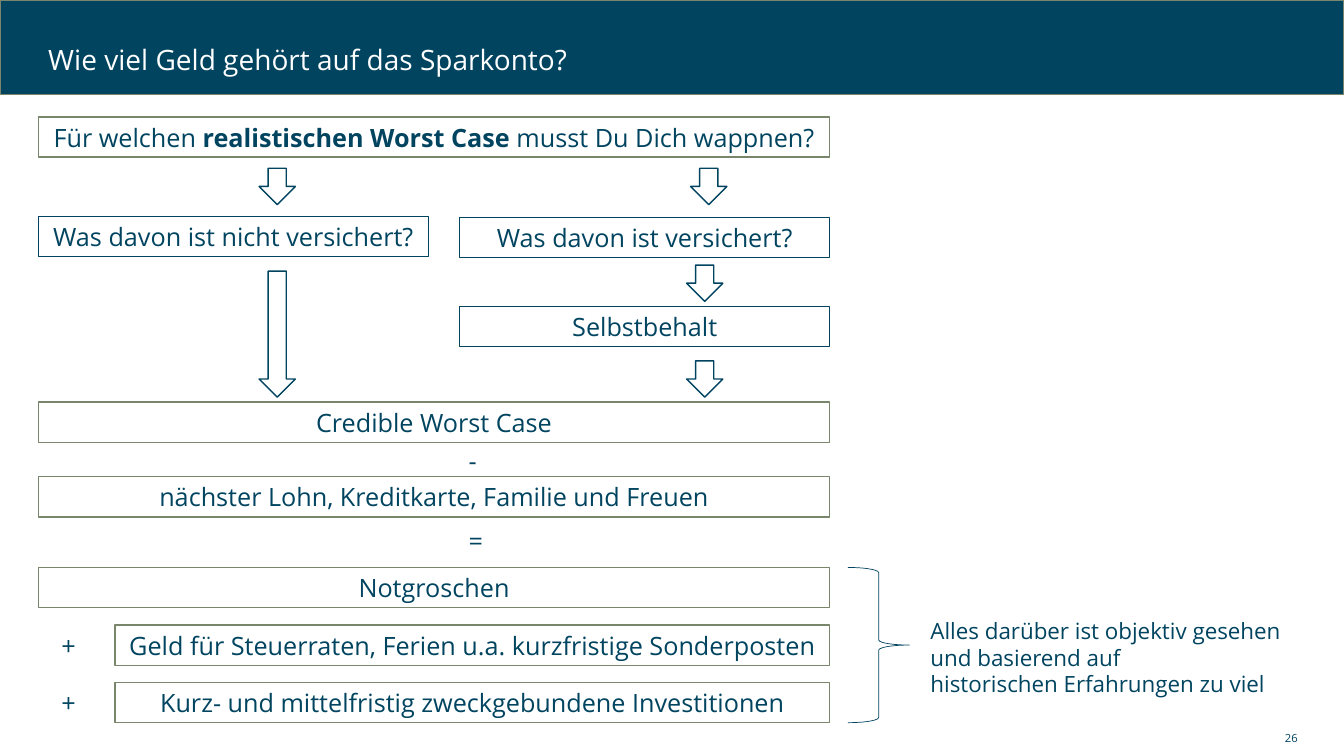
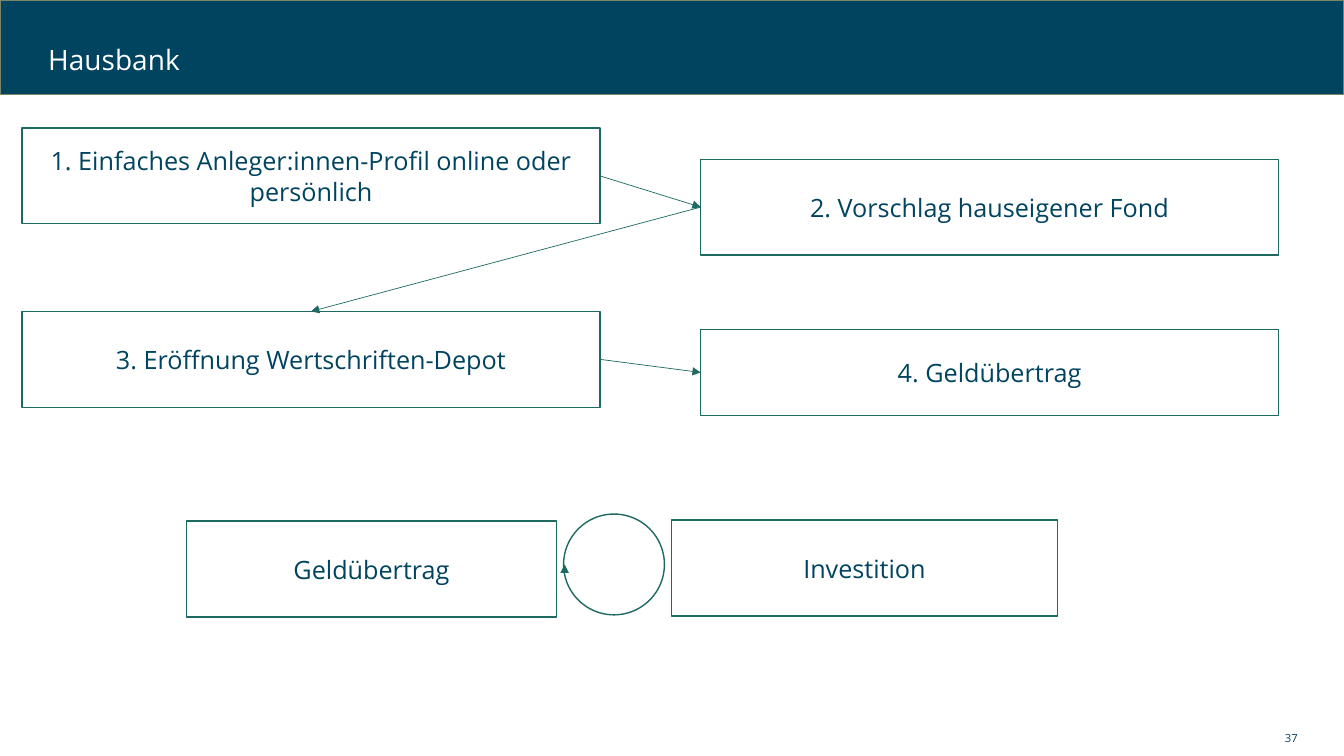
import pptx
import pptx.util
import pptx.dml.color
import pptx.enum.shapes
import pptx.enum.text
import pptx.oxml
import pptx.oxml.ns

Inches = pptx.util.Inches
Pt = pptx.util.Pt
KIND = pptx.enum.shapes.MSO_SHAPE
SIDE = pptx.enum.text.PP_ALIGN
HOLD = pptx.enum.text.MSO_ANCHOR
FONT = "Open Sans"
COLORS = {"navy": "004460", "olive": "7A866C", "green": "1E6A62", "white": "FFFFFF"}
TOP, LEFT, RIGHT = 0, 1, 3


def tint(name):
    return pptx.dml.color.RGBColor.from_string(COLORS[name])


def write(shape, text, size=18, color="navy", align=SIDE.CENTER,
          anchor=HOLD.MIDDLE, wrap=True, space=1.0):
    frame = shape.text_frame
    frame.word_wrap = wrap
    frame.vertical_anchor = anchor
    for i, line in enumerate(text.split("\n")):
        para = frame.paragraphs[0] if i == 0 else frame.add_paragraph()
        para.alignment = align
        para.line_spacing = space
        for j, part in enumerate(line.split("*")):
            run = para.add_run()
            run.text = part
            run.font.name = FONT
            run.font.size = Pt(size)
            run.font.bold = j % 2 == 1
            run.font.color.rgb = tint(color)


def label(slide, text, x, y, w, h, **form):
    box = slide.shapes.add_textbox(Inches(x), Inches(y), Inches(w), Inches(h))
    write(box, text, **form)


def draw(slide, kind, x, y, w, h, line="navy", width=1.0, fill=None):
    shape = slide.shapes.add_shape(kind, Inches(x), Inches(y), Inches(w), Inches(h))
    shape.shadow.inherit = False
    shape.line.color.rgb = tint(line)
    shape.line.width = Pt(width)
    if fill:
        shape.fill.solid()
        shape.fill.fore_color.rgb = tint(fill)
    else:
        shape.fill.background()
    return shape


def panel(slide, text, x, y, w, h=0.4, **look):
    shape = draw(slide, KIND.RECTANGLE, x, y, w, h, **look)
    write(shape, text)
    return shape


def arrow(slide, start, end):
    line = slide.shapes.add_connector(
        pptx.enum.shapes.MSO_CONNECTOR.STRAIGHT,
        *[Inches(v) for v in start + end])
    line.line.color.rgb = tint("green")
    line.line.width = Pt(0.5)
    edge = line.line._get_or_add_ln()
    head = pptx.oxml.parse_xml(
        '<a:tailEnd %s type="triangle"/>' % pptx.oxml.ns.nsdecls("a"))
    edge.append(head)
    line._element.spPr.append(
        pptx.oxml.parse_xml("<a:effectLst %s/>" % pptx.oxml.ns.nsdecls("a")))
    return line


def join(slide, first, side, last, goal):
    line = arrow(slide, (0, 0), (1, 1))
    line.begin_connect(first, side)
    line.end_connect(last, goal)


def page(deck, title, number):
    slide = deck.slides.add_slide(deck.slide_layouts[6])
    draw(slide, KIND.RECTANGLE, 0, 0, 13.33, 0.94, line="olive", fill="navy")
    label(slide, title, 0.38, 0.34, 11.02, 0.54, size=20, color="white",
          align=SIDE.LEFT, space=0.9)
    label(slide, str(number), 9.42, 7.2, 3.55, 0.24, size=8, align=SIDE.RIGHT)
    return slide


def flow(slide, x, y, w):
    for text, top in (
        ("Für welchen *realistischen Worst Case* musst Du Dich wappnen?", 0),
        ("Credible Worst Case", 2.83),
        ("nächster Lohn, Kreditkarte, Familie und Freuen", 3.57),
    ):
        panel(slide, text, x, y + top, w, line="olive")
    half = 3.67
    panel(slide, "Was davon ist nicht versichert?", x, y + 0.99, 3.87, width=0.75)
    for text, top in (("Was davon ist versichert?", 1), ("Selbstbehalt", 1.88)):
        panel(slide, text, x + w - half, y + top, half, width=0.75)
    for left, top, high in ((2.19, 0.51, 0.36), (6.47, 0.51, 0.36),
                            (6.43, 1.47, 0.36), (6.43, 2.42, 0.36),
                            (2.19, 1.53, 1.25)):
        draw(slide, KIND.DOWN_ARROW, x + left, y + top, 0.36, high)
    for sign, top in (("-", 3.21), ("=", 4)):
        label(slide, sign, x + 4.17, y + top, 0.35, 0.4, align=SIDE.LEFT, wrap=False)


def total(slide, x, y, w):
    step, dent = 0.57, 0.76
    panel(slide, "Notgroschen", x, y, w, line="olive")
    for i, text in enumerate((
        "Geld für Steuerraten, Ferien u.a. kurzfristige Sonderposten",
        "Kurz- und mittelfristig zweckgebundene Investitionen",
    ), 1):
        panel(slide, text, x + dent, y + i * step, w - dent, line="olive")
        label(slide, "+", x + 0.13, y + i * step, 0.35, 0.4,
              align=SIDE.LEFT, wrap=False)
    draw(slide, KIND.RIGHT_BRACE, x + w + 0.18, y, 0.61, 2 * step + 0.4, width=0.5)
    label(slide, "Alles darüber ist objektiv gesehen\nund basierend auf\n"
          "historischen Erfahrungen zu viel", x + w + 0.9, y + 0.44, 3.71, 0.91,
          size=16, align=SIDE.LEFT, anchor=HOLD.TOP, wrap=False)


def steps(slide, x, y, w, h):
    look = {"line": "green", "fill": "white"}
    next_x = x + w + 1
    one = panel(slide, "1. Einfaches Anleger:innen-Profil online oder persönlich",
                x, y, w, h, **look)
    two = panel(slide, "2. Vorschlag hauseigener Fond", next_x, y + 0.31, w, h, **look)
    three = panel(slide, "3. Eröffnung Wertschriften-Depot", x, y + 1.82, w, h, **look)
    four = panel(slide, "4. Geldübertrag", next_x, y + 2, w, h - 0.1, **look)
    join(slide, one, RIGHT, two, LEFT)
    join(slide, two, LEFT, three, TOP)
    join(slide, three, RIGHT, four, LEFT)


def cycle(slide, x, y, h):
    look = {"line": "green", "fill": "white"}
    panel(slide, "Geldübertrag", x, y + 0.01, 3.67, h, **look)
    panel(slide, "Investition", x + 4.81, y, 3.83, h, **look)
    draw(slide, KIND.OVAL, x + 3.74, y - 0.06, 1, 1, **look)
    arrow(slide, (x + 3.75, y + 0.52), (x + 3.75, y + 0.44))


def main():
    deck = pptx.Presentation()
    deck.slide_width = Inches(13.33)
    deck.slide_height = Inches(7.5)
    slide = page(deck, "Wie viel Geld gehört auf das Sparkonto?", 26)
    flow(slide, 0.38, 1.16, 7.85)
    total(slide, 0.38, 5.63, 7.85)
    slide = page(deck, "Hausbank", 37)
    steps(slide, 0.22, 1.27, 5.73, 0.95)
    cycle(slide, 1.85, 5.16, 0.95)
    deck.save("out.pptx")


if __name__ == "__main__":
    main()
